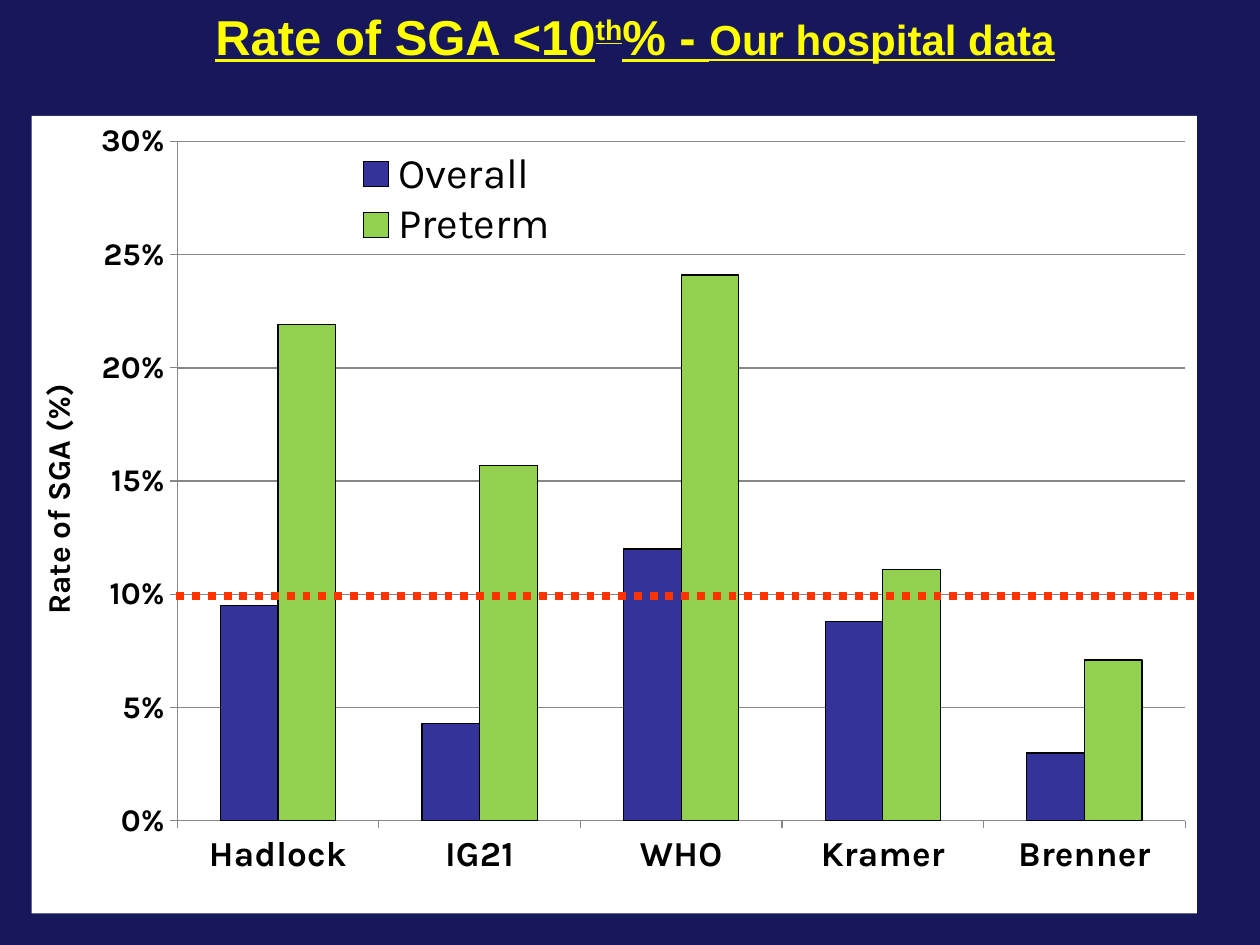
from dataclasses import dataclass

from lxml.etree import SubElement
from pptx import Presentation
from pptx.chart.data import CategoryChartData
from pptx.dml.color import RGBColor
from pptx.enum.chart import XL_CHART_TYPE, XL_LEGEND_POSITION, XL_TICK_MARK
from pptx.enum.dml import MSO_LINE
from pptx.enum.shapes import MSO_CONNECTOR
from pptx.enum.text import PP_ALIGN
from pptx.oxml import parse_xml
from pptx.oxml.ns import nsdecls, qn
from pptx.util import Inches, Pt


@dataclass(frozen=True)
class Theme:
    background: str = "17175C"
    title: str = "FFFF00"
    panel: str = "FFFFFF"
    ink: str = "000000"
    grid: str = "878787"
    threshold: str = "FF3300"
    series: tuple = ("333399", "92D050")
    title_font: str = "Arial"
    chart_font: str = "Karla"
    title_size: int = 28
    subtitle_size: int = 24
    legend_size: int = 24
    category_size: int = 20
    value_size: int = 18


def rgb(code):
    return RGBColor.from_string(code)


def manual_layout(x, y, w, h, inner=False):
    """Return a chart layout element placed by fractions of the chart's size."""
    layout = parse_xml(f"<c:layout {nsdecls('c')}><c:manualLayout/></c:layout>")
    settings = [("layoutTarget", "inner")] if inner else []
    settings += [("xMode", "edge"), ("yMode", "edge"), ("x", x), ("y", y), ("w", w), ("h", h)]
    for tag, value in settings:
        SubElement(layout[0], qn(f"c:{tag}")).set("val", str(value))
    return layout


class SlideBuilder:
    def __init__(self, slide, theme):
        self.slide = slide
        self.theme = theme
        background = slide.background.fill
        background.solid()
        background.fore_color.rgb = rgb(theme.background)

    def title(self, pieces, left, top, width, height):
        """Add a heading from (text, size, baseline percent) pieces."""
        frame = self.slide.shapes.add_textbox(left, top, width, height).text_frame
        frame.word_wrap = True
        heading = frame.paragraphs[0]
        heading.alignment = PP_ALIGN.CENTER
        heading.space_before = Pt(2.5)
        for text, size, baseline in pieces:
            run = heading.add_run()
            run.text = text
            font = run.font
            font.name, font.size = self.theme.title_font, Pt(size)
            font.bold = font.underline = True
            font.color.rgb = rgb(self.theme.title)
            if baseline:
                font._element.set("baseline", str(baseline * 1000))

    def style_axis(self, axis, size):
        axis.major_tick_mark = XL_TICK_MARK.OUTSIDE
        axis.minor_tick_mark = XL_TICK_MARK.NONE
        axis.format.line.color.rgb = rgb(self.theme.grid)
        axis.tick_labels.font.size = Pt(size)
        axis.tick_labels.font.bold = True

    def column_chart(self, categories, rates, value_title, left, top, width, height):
        theme = self.theme
        chart_data = CategoryChartData(number_format="0%")
        chart_data.categories = categories
        for name, values in rates.items():
            chart_data.add_series(name, values)
        chart = self.slide.shapes.add_chart(
            XL_CHART_TYPE.COLUMN_CLUSTERED, left, top, width, height, chart_data
        ).chart
        chart.has_title = False
        chart.font.name, chart.font.size = theme.chart_font, Pt(10)
        chart.font.color.rgb = rgb(theme.ink)
        chart_element = chart._chartSpace.find(qn("c:chart"))
        chart_element.addnext(parse_xml(
            f'<c:spPr {nsdecls("c", "a")}><a:solidFill><a:srgbClr val="{theme.panel}"/>'
            "</a:solidFill><a:ln><a:noFill/></a:ln></c:spPr>"
        ))

        plot_area = chart_element.find(qn("c:plotArea"))
        for automatic in plot_area.findall(qn("c:layout")):
            plot_area.remove(automatic)
        plot_area.insert(0, manual_layout(0.125, 0.032, 0.865, 0.852, inner=True))

        plot = chart.plots[0]
        plot.gap_width, plot.overlap, plot.vary_by_categories = 150, 0, False
        for series, color in zip(plot.series, theme.series):
            series.format.fill.solid()
            series.format.fill.fore_color.rgb = rgb(color)
            series.format.line.color.rgb = rgb(theme.ink)
            series.format.line.width = Pt(0.75)

        self.style_axis(chart.category_axis, theme.category_size)
        rate_axis = chart.value_axis
        self.style_axis(rate_axis, theme.value_size)
        rate_axis.minimum_scale, rate_axis.maximum_scale, rate_axis.major_unit = 0, 0.3, 0.05
        rate_axis.tick_labels.number_format = "0%"
        rate_axis.tick_labels.number_format_is_linked = False
        rate_axis.major_gridlines.format.line.color.rgb = rgb(theme.grid)
        label = rate_axis.axis_title.text_frame
        label.text = value_title
        label_font = label.paragraphs[0].font
        label_font.name, label_font.size, label_font.bold = theme.chart_font, Pt(theme.value_size), True
        label_font.color.rgb = rgb(theme.ink)

        chart.has_legend = True
        legend = chart.legend
        legend.position = XL_LEGEND_POSITION.LEFT
        legend.include_in_layout = True
        legend.font.size = Pt(theme.legend_size)
        legend_position = legend._element.find(qn("c:legendPos"))
        for automatic in legend._element.findall(qn("c:layout")):
            legend._element.remove(automatic)
        legend_position.addnext(manual_layout(0.27, 0.04, 0.19, 0.13))

    def threshold_line(self, left, right, y):
        rule = self.slide.shapes.add_connector(MSO_CONNECTOR.STRAIGHT, left, y, right, y)
        rule.line.color.rgb = rgb(self.theme.threshold)
        rule.line.width = Pt(4.5)
        rule.line.dash_style = MSO_LINE.ROUND_DOT
        SubElement(rule._element.spPr, qn("a:effectLst"))


def main():
    deck = Presentation()
    deck.slide_width, deck.slide_height = Inches(10), Inches(7.5)
    theme = Theme()
    builder = SlideBuilder(deck.slides.add_slide(deck.slide_layouts[6]), theme)

    builder.column_chart(
        ["Hadlock", "IG21", "WHO", "Kramer", "Brenner"],
        {
            "Overall": [0.095, 0.043, 0.12, 0.088, 0.03],
            "Preterm": [0.219, 0.157, 0.241, 0.111, 0.071],
        },
        "Rate of SGA (%)",
        Inches(0.25), Inches(0.92), Inches(9.25), Inches(6.33),
    )
    builder.title(
        [
            ("Rate of SGA <10", theme.title_size, 0),
            ("th", theme.title_size, 30),
            ("% - ", theme.title_size, 0),
            ("Our hospital data", theme.subtitle_size, 0),
        ],
        Inches(0.25), Inches(0), Inches(9.58), Inches(0.57),
    )
    builder.threshold_line(Inches(1.4), Inches(9.5), Inches(4.73))
    deck.save("out.pptx")


if __name__ == "__main__":
    main()
